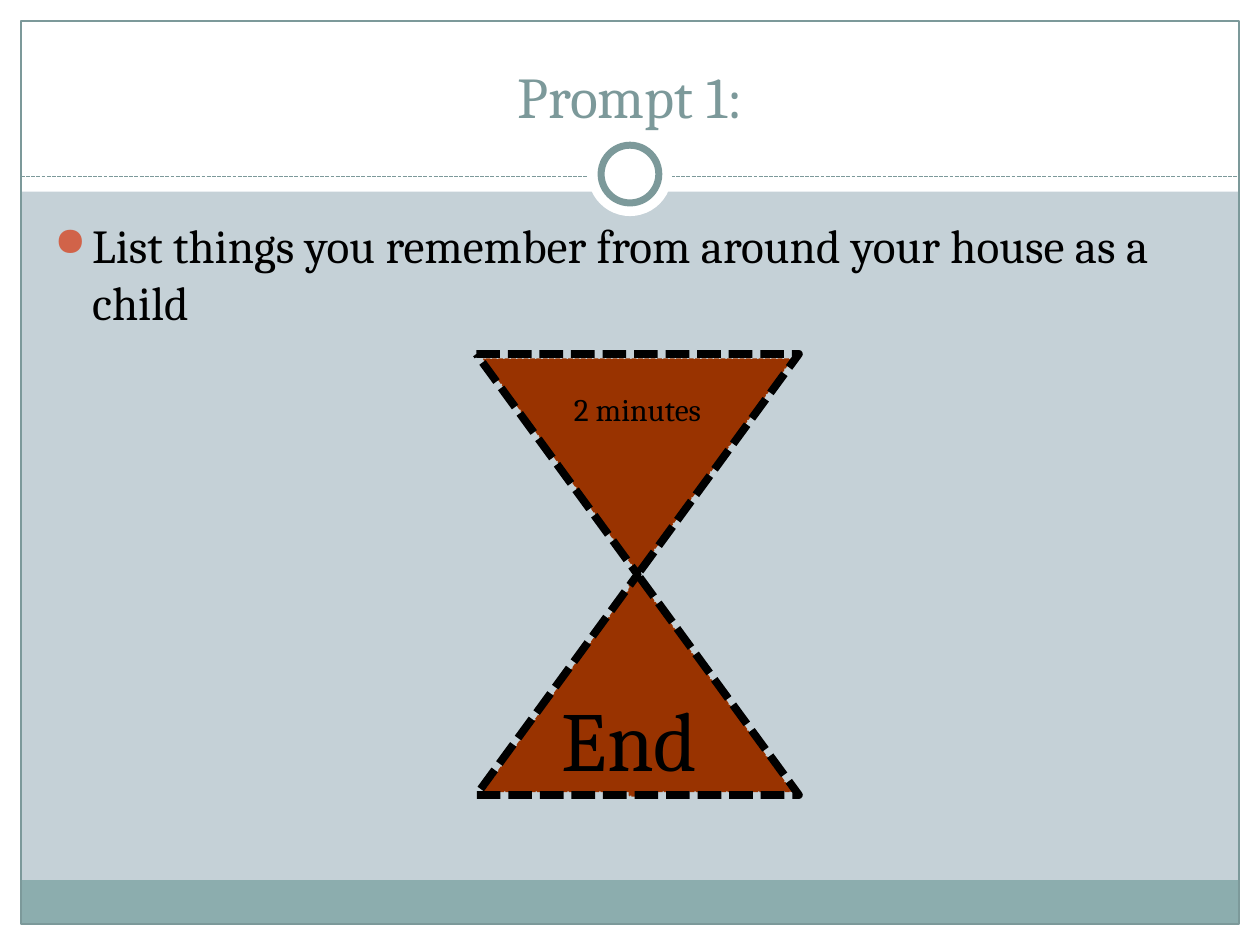
import pptx
import pptx.dml.color
import pptx.enum.dml
import pptx.enum.shapes
import pptx.enum.text
import pptx.oxml.ns
import lxml.etree

Pt = pptx.util.Pt
RGB = pptx.dml.color.RGBColor
KIND = pptx.enum.shapes.MSO_SHAPE
ALIGN = pptx.enum.text.PP_ALIGN
ANCHOR = pptx.enum.text.MSO_ANCHOR
FIT = pptx.enum.text.MSO_AUTO_SIZE
DASH = pptx.enum.dml.MSO_LINE.SQUARE_DOT

WHITE = RGB(0xFF, 0xFF, 0xFF)
BLACK = RGB(0, 0, 0)
MIST = RGB(0xC5, 0xD1, 0xD7)
TEAL = RGB(0x8C, 0xAD, 0xAE)
SLATE = RGB(0x7C, 0x99, 0x9A)
RUST = RGB(0x99, 0x33, 0x00)
CORAL = RGB(0xD1, 0x63, 0x49)

WIDE, HIGH = 720, 540
EDGE = 12


def put(item, values):
    """Set each named value on the item."""
    for name, value in values.items():
        setattr(item, name, value)


def add_sub(parent, tag, **attrs):
    """Add a drawing element below parent."""
    return lxml.etree.SubElement(parent, pptx.oxml.ns.qn(tag), attrs)


def stroke(line, tint, width, dash=None):
    line.color.rgb = tint
    put(line, {"width": Pt(width), "dash_style": dash})


def add_form(slide, kind, box, fill=None, line=None, turn=0):
    """Add a preset shape; line holds colour, width and dash."""
    form = slide.shapes.add_shape(kind, *map(Pt, box))
    form.shadow.inherit = False
    form.rotation = turn
    if fill is None:
        form.fill.background()
    else:
        form.fill.solid()
        form.fill.fore_color.rgb = fill
    if line is None:
        form.line.fill.background()
    else:
        stroke(form.line, *line)
    return form


def add_rule(slide, start, end, line):
    kind = pptx.enum.shapes.MSO_CONNECTOR.STRAIGHT
    rule = slide.shapes.add_connector(kind, *map(Pt, start + end))
    stroke(rule.line, *line)
    add_sub(rule._element.spPr, "a:effectLst")


def write(shape, text, size, tint, frame, align=ALIGN.LEFT):
    """Fill a shape with one line of text and return its paragraph."""
    put(shape.text_frame, frame)
    para = shape.text_frame.paragraphs[0]
    para.alignment = align
    run = para.add_run()
    run.text = text
    put(run.font, {"size": Pt(size), "name": "Cambria", "bold": False})
    run.font.color.rgb = tint
    return para


def add_text(slide, box, *args):
    return write(slide.shapes.add_textbox(*map(Pt, box)), *args)


def add_dot(para, tint, inset):
    """Give the paragraph a hanging round bullet."""
    props = para._p.get_or_add_pPr()
    props.set("marL", str(Pt(inset)))
    props.set("indent", str(-Pt(inset)))
    add_sub(add_sub(props, "a:buClr"), "a:srgbClr", val=str(tint))
    add_sub(props, "a:buSzPct", val="85000")
    add_sub(props, "a:buChar", char="●")


def draw_frame(slide):
    # White margins, footer band and outline
    for box in ((0, HIGH - EDGE, WIDE, EDGE), (0, 0, WIDE, 109.5),
                (0, 0, EDGE, HIGH), (WIDE - EDGE, 0, EDGE, HIGH)):
        add_form(slide, KIND.RECTANGLE, box, WHITE)
    inner = WIDE - 2 * EDGE
    add_form(slide, KIND.RECTANGLE, (EDGE, 503, inner, 25), TEAL)
    add_form(slide, KIND.RECTANGLE, (EDGE, EDGE, inner, HIGH - 2 * EDGE),
             line=(SLATE, 0.75))
    # Dashed rule with the ring in its middle
    add_rule(slide, (EDGE, 100.8), (WIDE - EDGE, 100.8), (SLATE, 0.75, DASH))
    for size, line in ((48, None), (33, (SLATE, 4))):
        box = ((WIDE - size) / 2, 99.5 - size / 2, size, size)
        add_form(slide, KIND.OVAL, box, WHITE, line)


def draw_glass(slide):
    # Sand, stream and dashed outline of the hourglass
    thin = (RUST, 0.9, DASH)
    for top, turn in ((330.5, 0), (205.2, 180)):
        add_form(slide, KIND.ISOSCELES_TRIANGLE, (276.5, top, 175.7, 121.7),
                 RUST, thin, turn)
    add_form(slide, KIND.PENTAGON, (301.7, 388.1, 124.6, 8.6), RUST, thin, 270)
    add_form(slide, KIND.FLOWCHART_COLLATE, (272.2, 202.3, 184.3, 252),
             line=(BLACK, 4.5, DASH))
    # Labels
    loose = {"word_wrap": False, "auto_size": FIT.SHAPE_TO_FIT_TEXT}
    add_text(slide, (317.5, 219.6, 93.6, 28.8), "2 minutes", 18, BLACK,
             loose, ALIGN.CENTER)
    add_text(slide, (313.9, 389.5, 100, 64.8), "End", 48, BLACK, loose)


def main():
    deck = pptx.Presentation()
    put(deck, {"slide_width": Pt(WIDE), "slide_height": Pt(HIGH)})
    slide = deck.slides.add_slide(deck.slide_layouts[5])
    slide.background.fill.solid()
    slide.background.fill.fore_color.rgb = MIST
    draw_frame(slide)

    # Title, raised above the white band
    title = slide.shapes.title
    put(title, {"left": Pt(24), "top": Pt(18),
                "width": Pt(672), "height": Pt(60)})
    write(title, "Prompt 1:", 33, SLATE,
          {"vertical_anchor": ANCHOR.BOTTOM, "word_wrap": True,
           "auto_size": FIT.NONE}, ALIGN.CENTER)
    slide.shapes._spTree.append(title._element)

    # Task
    task = add_text(slide, (24, 120, 669.6, 82),
                    "List things you remember from around your house as a child",
                    27, BLACK, {"word_wrap": True})
    task.space_before = Pt(5.4)
    add_dot(task, CORAL, 21.6)

    draw_glass(slide)
    deck.save("out.pptx")


if __name__ == "__main__":
    main()
